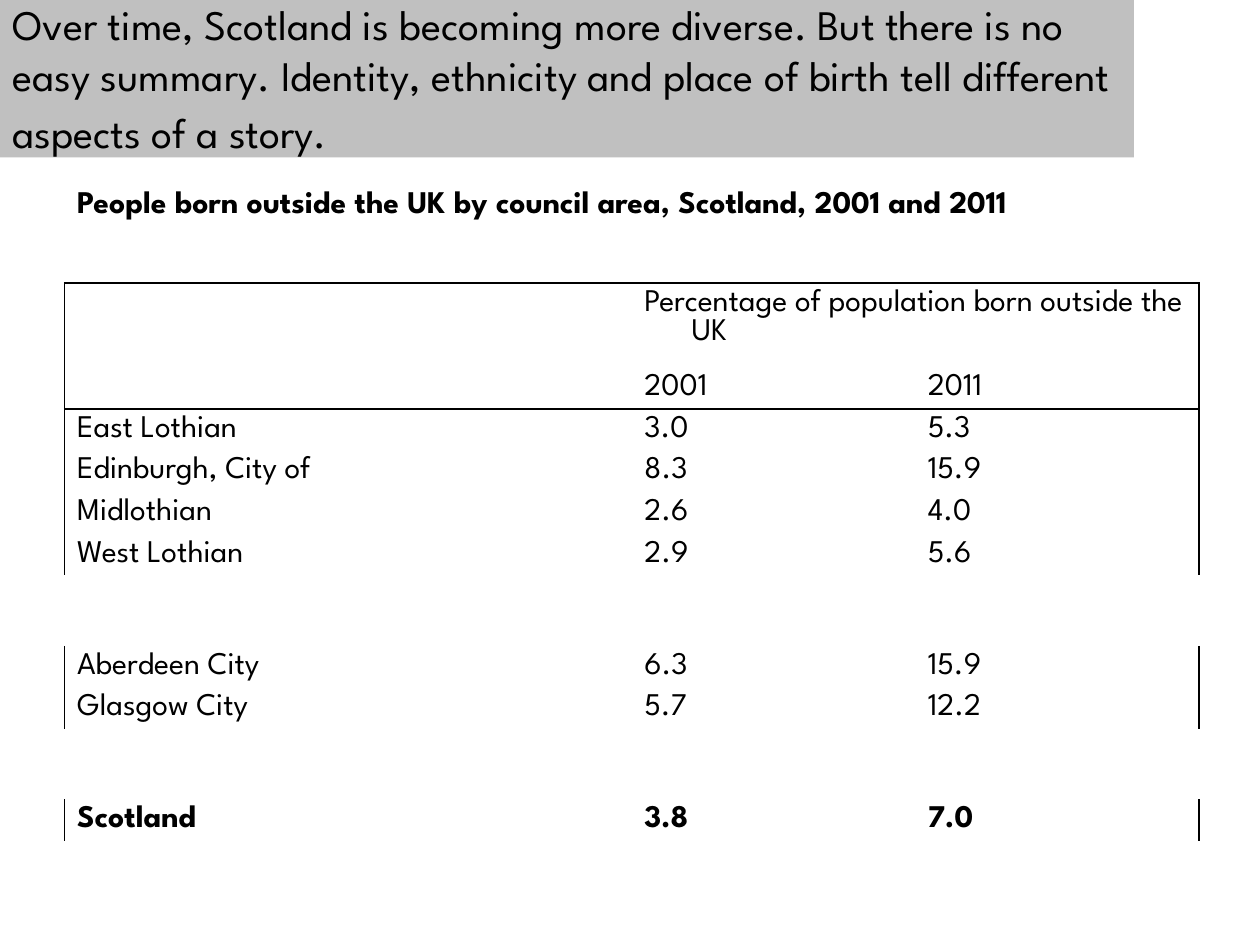
import pptx
import pptx.util
import pptx.dml.color
import pptx.enum.shapes
import pptx.enum.text
import pptx.oxml.ns
import lxml.etree

Pt = pptx.util.Pt
ANCHOR = pptx.enum.text.MSO_ANCHOR
COLOURS = {"text": "000000", "banner": "C0C0C0", "rule": "000000"}
FONT = "League Spartan"
PLAIN_STYLE = "{2D5ABB26-0587-4C30-8999-92F81FD0307C}"

BANNER = ("Over time, Scotland is becoming more diverse. But there is no easy summary. "
          "Identity, ethnicity and place of birth tell different aspects of a story.")
CAPTION = "People born outside the UK by council area, Scotland, 2001 and 2011"
HEADING = "Percentage of population born outside the UK"
YEARS = ("", "2001", "2011")
GAP = ("", "", "")
AREAS = [
    ("East Lothian", "3.0", "5.3"),
    ("Edinburgh, City of", "8.3", "15.9"),
    ("Midlothian", "2.6", "4.0"),
    ("West Lothian", "2.9", "5.6"),
    GAP,
    ("Aberdeen City", "6.3", "15.9"),
    ("Glasgow City", "5.7", "12.2"),
    GAP,
    ("Scotland", "3.8", "7.0"),
]


def colour(name):
    return pptx.dml.color.RGBColor.from_string(COLOURS[name])


def add_span(para, text, size, bold=False):
    span = para.add_run()
    span.text = text
    span.font.name = FONT
    span.font.size = Pt(size)
    span.font.bold = bold
    span.font.color.rgb = colour("text")


def write_cell(cell, text, bold=False, anchor=ANCHOR.TOP):
    cell.vertical_anchor = anchor
    para = cell.text_frame.paragraphs[0]
    # Hanging indent
    properties = para._p.get_or_add_pPr()
    properties.set("marL", str(Pt(27)))
    properties.set("indent", str(-Pt(27)))
    add_span(para, text, 18, bold)


def set_borders(cell, sides):
    """Rule the sides named by the letters L, R, T and B, and clear the others."""
    properties = cell._tc.get_or_add_tcPr()
    for index, side in enumerate("LRTB"):
        line = lxml.etree.Element(pptx.oxml.ns.qn(f"a:ln{side}"), w=str(Pt(1)))
        if side in sides:
            fill = lxml.etree.SubElement(line, pptx.oxml.ns.qn("a:solidFill"))
            lxml.etree.SubElement(fill, pptx.oxml.ns.qn("a:srgbClr"), val=COLOURS["rule"])
        else:
            lxml.etree.SubElement(line, pptx.oxml.ns.qn("a:noFill"))
        properties.insert(index, line)


def add_banner(page, left, top, width, height):
    box = page.shapes.add_shape(pptx.enum.shapes.MSO_SHAPE.RECTANGLE,
                                Pt(left), Pt(top), Pt(width), Pt(height))
    box.shadow.inherit = False
    box.fill.solid()
    box.fill.fore_color.rgb = colour("banner")
    box.line.fill.background()
    frame = box.text_frame
    frame.word_wrap = True
    frame.vertical_anchor = ANCHOR.MIDDLE
    para = frame.paragraphs[0]
    para.alignment = pptx.enum.text.PP_ALIGN.LEFT
    add_span(para, BANNER, 24)
    # The larger closing space deepens the last line
    add_span(para, " ", 28)


def add_area_table(page, left, top, width):
    heights = [56, 48, 23.8] + [40.2 if row == GAP else 23.8 for row in AREAS]
    frame = page.shapes.add_table(len(heights), 3, Pt(left), Pt(top),
                                  Pt(width), Pt(sum(heights)))
    table = frame.table
    table.first_row = table.horz_banding = False
    table._tbl.tblPr.find(pptx.oxml.ns.qn("a:tableStyleId")).text = PLAIN_STYLE
    for column, share in zip(table.columns, (0.5, 0.25, 0.25)):
        column.width = Pt(width * share)
    for row, height in zip(table.rows, heights):
        row.height = Pt(height)

    # Caption and column heading
    table.cell(0, 0).merge(table.cell(0, 2))
    table.cell(1, 1).merge(table.cell(1, 2))
    write_cell(table.cell(0, 0), CAPTION, bold=True)
    write_cell(table.cell(1, 1), HEADING)

    # Years and council areas
    for row, values in enumerate([YEARS] + AREAS, start=2):
        for column, value in enumerate(values):
            cell = table.cell(row, column)
            if value:
                write_cell(cell, value, bold=values[0] == "Scotland",
                           anchor=ANCHOR.TOP if values == YEARS else ANCHOR.BOTTOM)
            else:
                # An empty cell must not stretch its row
                cell.margin_top = cell.margin_bottom = Pt(0)

    # Rules: round the heading, and down both edges of each group
    across = {0: "B", 1: "T", 2: "B", 3: "T"}
    gaps = [row for row, values in enumerate(AREAS, start=3) if values == GAP]
    for row in range(len(heights)):
        for column, edge in enumerate(("L", "", "R")):
            cell = table.cell(row, column)
            cell.fill.background()
            sides = across.get(row, "")
            if row and row not in gaps:
                sides += "R" if (row, column) == (1, 1) else edge
            set_borders(cell, sides)


def main():
    deck = pptx.Presentation()
    deck.slide_width, deck.slide_height = Pt(720), Pt(540)
    page = deck.slides.add_slide(deck.slide_layouts[6])
    add_banner(page, 0, 0, 648, 90)
    add_area_table(page, 36.9, 105.8, 648.2)
    deck.save("out.pptx")


if __name__ == "__main__":
    main()
